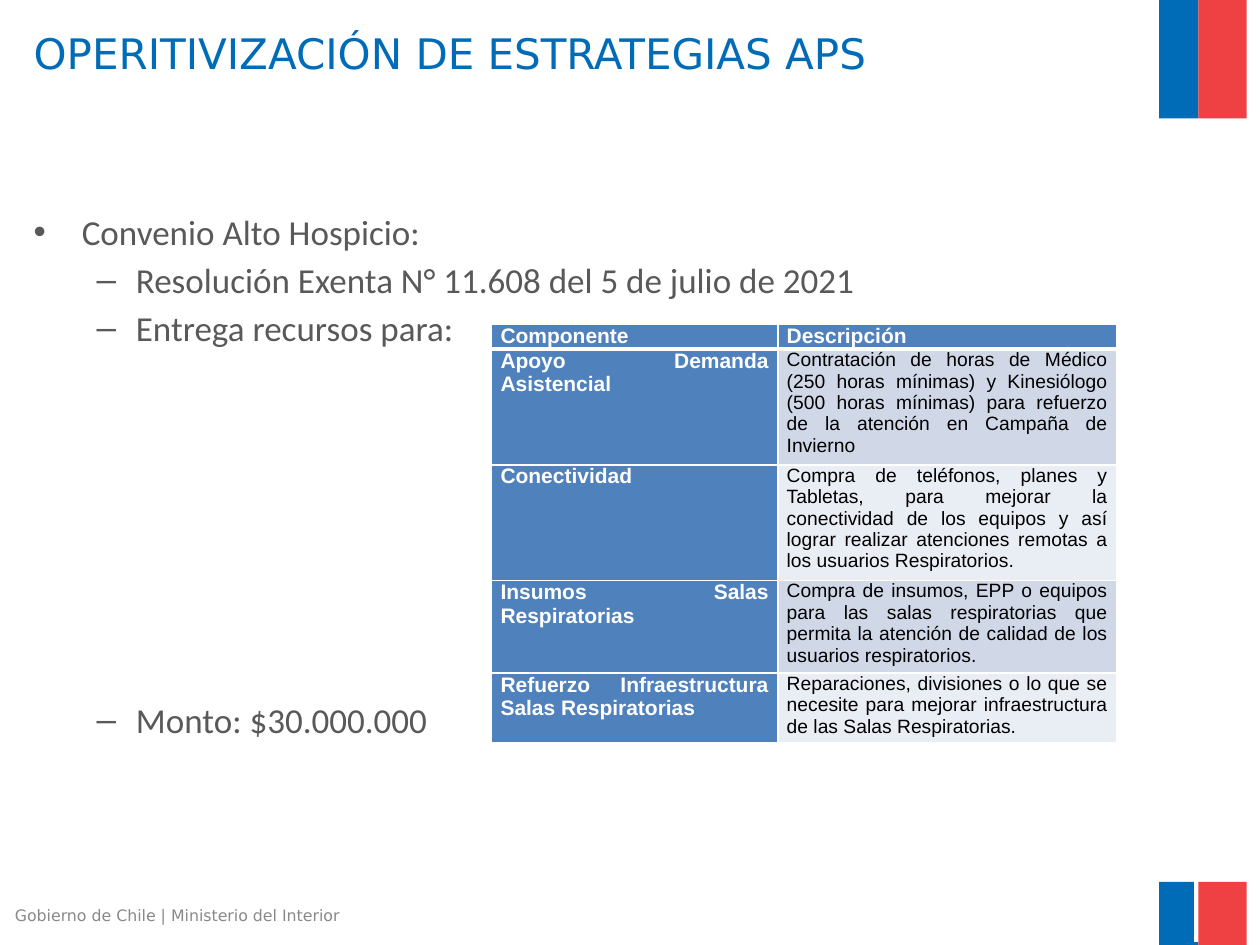
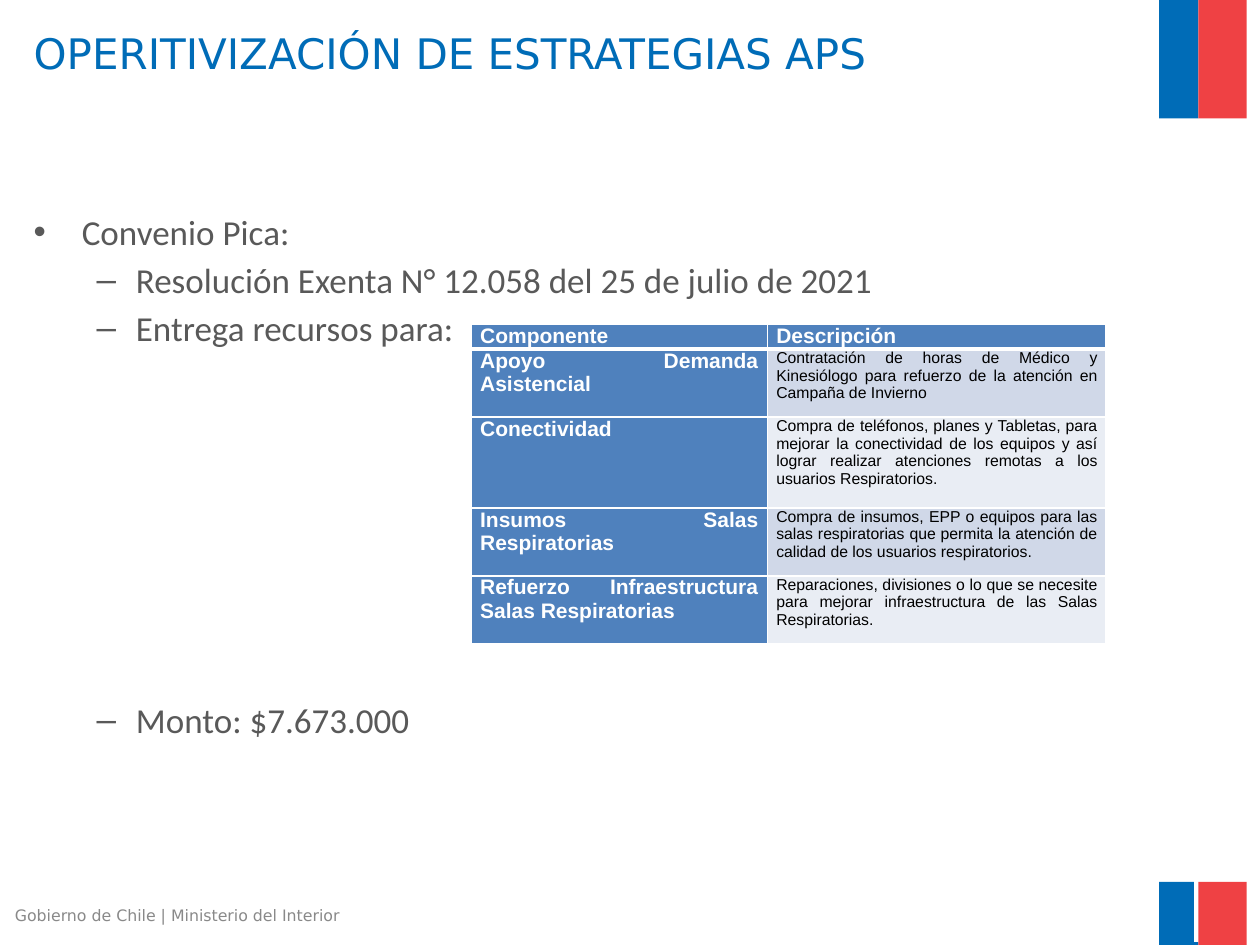
"""Build two slides on primary care agreements, each with a list and a table."""
from lxml import etree
from pptx import Presentation
from pptx.dml.color import RGBColor
from pptx.enum.shapes import MSO_SHAPE
from pptx.enum.text import PP_ALIGN
from pptx.oxml.ns import qn
from pptx.util import Cm, Pt

RECT = MSO_SHAPE.RECTANGLE
JUSTIFY = PP_ALIGN.JUSTIFY

COLORS = {
    "blue": "006CB7", "red": "EF4144", "shadow": "808080",
    "body": "595959", "footer": "898989", "header": "4F81BD",
    "band": "D0D8E8", "light": "E9EDF4", "white": "FFFFFF", "black": "000000",
}
TITLE = "OPERITIVIZACIÓN DE ESTRATEGIAS APS"
FOOTER = "Gobierno de Chile | Ministerio del Interior"
HEADER = ("Componente", "Descripción")
COMPONENTS = ("Apoyo Demanda Asistencial", "Conectividad",
              "Insumos Salas Respiratorias",
              "Refuerzo Infraestructura Salas Respiratorias")
SHARED_DESCRIPTIONS = (
    "Compra de teléfonos, planes y Tabletas, para mejorar la conectividad de los "
    "equipos y así lograr realizar atenciones remotas a los usuarios Respiratorios.",
    "Compra de insumos, EPP o equipos para las salas respiratorias que permita la "
    "atención de calidad de los usuarios respiratorios.",
    "Reparaciones, divisiones o lo que se necesite para mejorar infraestructura de "
    "las Salas Respiratorias.",
)
AGREEMENTS = [
    {
        "place": "Convenio Alto Hospicio:",
        "resolution": "Resolución Exenta N° 11.608 del 5 de julio de 2021",
        "amount": "Monto: $30.000.000",
        "support": "Contratación de horas de Médico (250 horas mínimas) y Kinesiólogo "
                   "(500 horas mínimas) para refuerzo de la atención en Campaña de Invierno",
        "left": 9.91, "cols": (5.77, 6.83), "size": 11,
        "rows": (0.48, 2.15, 2.15, 1.73, 1.3),
    },
    {
        "place": "Convenio Pica:",
        "resolution": "Resolución Exenta N° 12.058 del 25 de julio de 2021",
        "amount": "Monto: $7.673.000",
        "support": "Contratación de horas de Médico y Kinesiólogo para refuerzo de la "
                   "atención en Campaña de Invierno",
        "left": 9.5, "cols": (5.97, 6.83), "size": 9,
        "rows": (0.46, 1.37, 1.83, 1.37, 1.37),
    },
]
FLAG_PARTS = [("blue", 23.37, 0.79), ("red", 24.16, 0.97)]
FLAG_BANDS = [(0, 2.39, 45), (17.78, 1.27, 215)]
LEVELS = [("•", 0.97, -0.97), ("–", 2.06, -0.79)]
LINE_GAP, TABLE_GAP = 3.6, 200


def rgb(name):
    return RGBColor.from_string(COLORS[name])


def add_solid(parent, name, opacity=100):
    fill = etree.SubElement(parent, qn("a:solidFill"))
    color = etree.SubElement(fill, qn("a:srgbClr"), val=COLORS[name])
    if opacity < 100:
        etree.SubElement(color, qn("a:alpha"), val=str(opacity * 1000))


def add_run(p, text, size, font, color, bold=False):
    r = p.add_run()
    r.text = text
    r.font.size, r.font.name, r.font.bold = Pt(size), font, bold
    r.font.color.rgb = rgb(color)


def add_box(s, left, top, width, height):
    tf = s.shapes.add_textbox(Cm(left), Cm(top), Cm(width), Cm(height)).text_frame
    tf.word_wrap = True
    return tf


def add_flag(s):
    for top, height, angle in FLAG_BANDS:
        for color, left, width in FLAG_PARTS:
            sp = s.shapes.add_shape(RECT, Cm(left), Cm(top), Cm(width), Cm(height))
            sp.shadow.inherit = False
            sp.fill.solid()
            sp.fill.fore_color.rgb = rgb(color)
            sp.line.fill.background()
            effects = sp._element.spPr.find(qn("a:effectLst"))
            shadow = etree.SubElement(effects, qn("a:outerShdw"), blurRad="0",
                                      dist=str(Pt(3)), dir=str(angle * 60000),
                                      algn="ctr", rotWithShape="0")
            add_solid(shadow, "shadow", 25)


def add_list(s, agreement):
    items = [
        (agreement["place"], 0, LINE_GAP),
        (agreement["resolution"], 1, LINE_GAP),
        ("Entrega recursos para:", 1, LINE_GAP),
        (agreement["amount"], 1, TABLE_GAP),
    ]
    tf = add_box(s, 0.43, 4.11, 22.71, 12.57)
    for i, (text, level, gap) in enumerate(items):
        p = tf.add_paragraph() if i else tf.paragraphs[0]
        p.level = level
        p.space_before = Pt(gap)
        bullet, margin, indent = LEVELS[level]
        pPr = p._p.get_or_add_pPr()
        pPr.set("marL", str(Cm(margin)))
        pPr.set("indent", str(Cm(indent)))
        etree.SubElement(pPr, qn("a:buFont"), typeface="Arial")
        etree.SubElement(pPr, qn("a:buChar"), char=bullet)
        add_run(p, text, 20, "Calibri", "body")


def set_borders(cell, row):
    widths = {"lnL": 1, "lnR": 1, "lnT": 3 if row == 1 else 1, "lnB": 1 if row else 3}
    tcPr = cell._tc.get_or_add_tcPr()
    for i, (side, width) in enumerate(widths.items()):
        ln = etree.Element(qn(f"a:{side}"), w=str(Pt(width)))
        add_solid(ln, "white")
        tcPr.insert(i, ln)


def add_components(s, agreement):
    descriptions = (agreement["support"],) + SHARED_DESCRIPTIONS
    rows = [HEADER, *zip(COMPONENTS, descriptions)]
    cols, heights = agreement["cols"], agreement["rows"]
    table = s.shapes.add_table(len(rows), len(cols), Cm(agreement["left"]), Cm(6.53),
                               Cm(sum(cols)), Cm(sum(heights))).table
    for column, width in zip(table.columns, cols):
        column.width = Cm(width)
    for i, texts in enumerate(rows):
        table.rows[i].height = Cm(heights[i])
        for j, text in enumerate(texts):
            cell = table.cell(i, j)
            heading = i == 0 or j == 0
            cell.margin_left = cell.margin_right = Cm(0.18)
            cell.margin_top = cell.margin_bottom = 0
            cell.fill.solid()
            cell.fill.fore_color.rgb = rgb(
                "header" if heading else "band" if i % 2 else "light")
            set_borders(cell, i)
            p = cell.text_frame.paragraphs[0]
            p.alignment = JUSTIFY
            p.space_after = Pt(12)
            add_run(p, text, 12 if heading else agreement["size"], "Arial",
                    "white" if heading else "black", heading)


def main():
    prs = Presentation()
    prs.slide_width, prs.slide_height = Cm(25.4), Cm(19.05)
    for agreement in AGREEMENTS:
        s = prs.slides.add_slide(prs.slide_layouts[6])
        add_flag(s)
        title = add_box(s, 0.43, 0.43, 22.68, 3.18)
        add_run(title.paragraphs[0], TITLE, 24, "DejaVu Sans", "blue")
        add_list(s, agreement)
        footer = add_box(s, 0.05, 18.14, 8.05, 0.69)
        add_run(footer.paragraphs[0], FOOTER, 9, "DejaVu Sans", "footer")
        add_components(s, agreement)
    prs.save("out.pptx")


if __name__ == "__main__":
    main()
